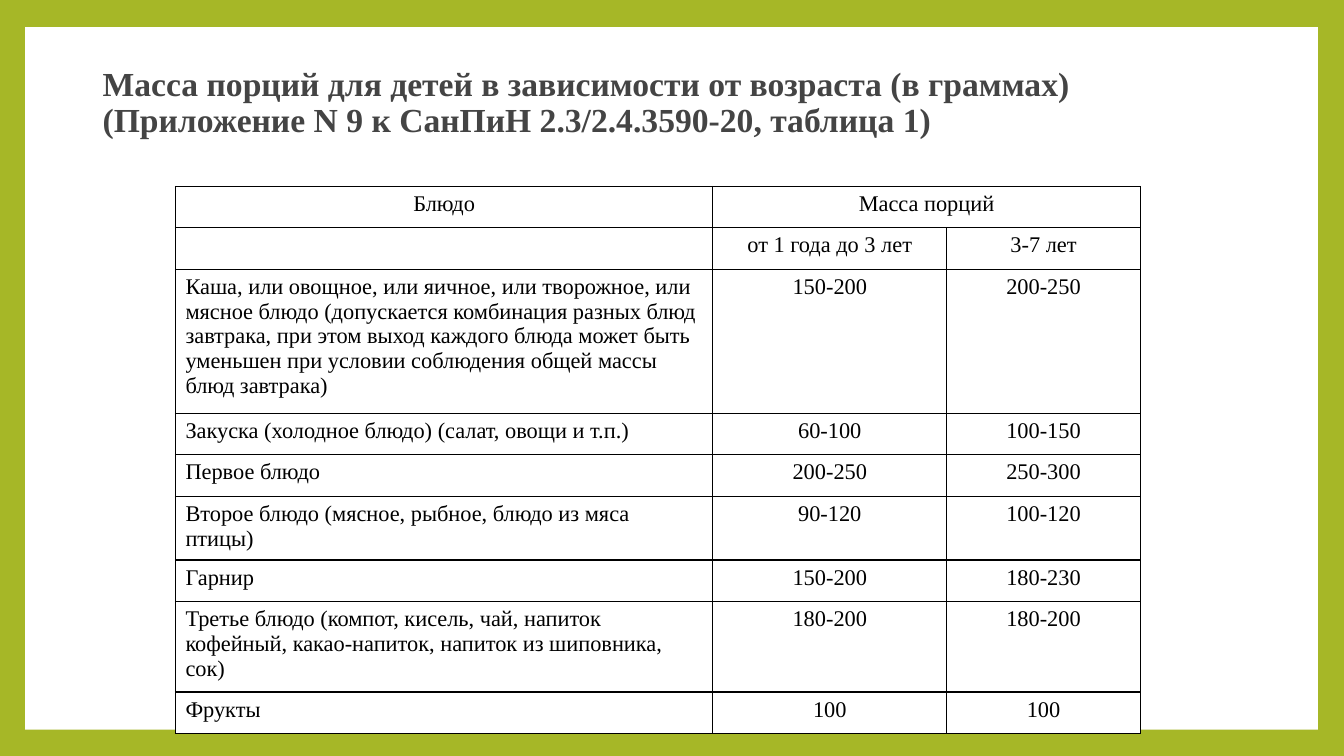
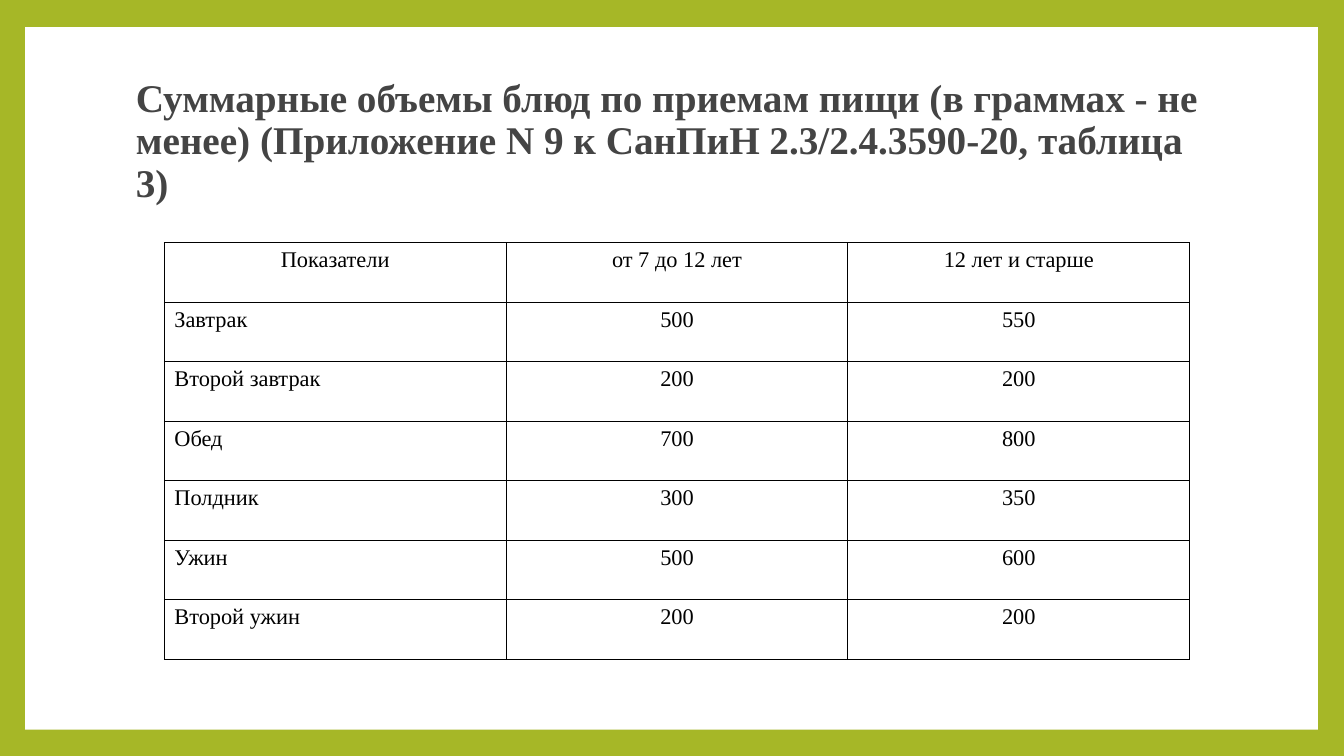
from lxml import etree
from pptx import Presentation
from pptx.dml.color import RGBColor
from pptx.enum.shapes import MSO_SHAPE
from pptx.enum.text import MSO_ANCHOR, PP_ALIGN
from pptx.oxml.ns import qn
from pptx.util import Emu, Pt

RECT = MSO_SHAPE.RECTANGLE
MIDDLE = MSO_ANCHOR.MIDDLE
LEFT, CENTER = PP_ALIGN.LEFT, PP_ALIGN.CENTER

GREEN = RGBColor(0xA6, 0xB7, 0x27)
WHITE = RGBColor(0xFF, 0xFF, 0xFF)
GRAY = RGBColor(0x44, 0x44, 0x44)
BLACK = RGBColor(0x00, 0x00, 0x00)
FONT = "Times New Roman"

PX = 9144  # 100 px to the inch
SLIDE_W, SLIDE_H = 1333, 750
PANEL = (25, 27, 1282, 697)

PORTIONS = [
    ("Блюдо", "Масса порций", ""),
    ("", "от 1 года до 3 лет", "3-7 лет"),
    ("Каша, или овощное, или яичное, или творожное, или мясное блюдо "
     "(допускается комбинация разных блюд завтрака, при этом выход каждого "
     "блюда может быть уменьшен при условии соблюдения общей массы блюд "
     "завтрака)", "150-200", "200-250"),
    ("Закуска (холодное блюдо) (салат, овощи и т.п.)", "60-100", "100-150"),
    ("Первое блюдо", "200-250", "250-300"),
    ("Второе блюдо (мясное, рыбное, блюдо из мяса птицы)", "90-120", "100-120"),
    ("Гарнир", "150-200", "180-230"),
    ("Третье блюдо (компот, кисель, чай, напиток кофейный, какао-напиток, "
     "напиток из шиповника, сок)", "180-200", "180-200"),
    ("Фрукты", "100", "100"),
]
MEALS = [
    ("Показатели", "от 7 до 12 лет", "12 лет и старше"),
    ("Завтрак", "500", "550"),
    ("Второй завтрак", "200", "200"),
    ("Обед", "700", "800"),
    ("Полдник", "300", "350"),
    ("Ужин", "500", "600"),
    ("Второй ужин", "200", "200"),
]


def px(*lengths):
    return [Emu(n * PX) for n in lengths]


def put_text(tf, text, size=16, color=BLACK, bold=False, align=LEFT, spacing=None):
    tf.word_wrap = True
    p = tf.paragraphs[0]
    p.alignment = align
    p.line_spacing = spacing
    r = p.add_run()
    r.text = text
    r.font.name = FONT
    r.font.size = Pt(size)
    r.font.bold = bold
    r.font.color.rgb = color


def set_borders(cell, width):
    tc_pr = cell._tc.get_or_add_tcPr()
    for side in ("a:lnL", "a:lnR", "a:lnT", "a:lnB"):
        ln = etree.SubElement(tc_pr, qn(side), w=str(Pt(width)))
        fill = etree.SubElement(ln, qn("a:solidFill"))
        etree.SubElement(fill, qn("a:srgbClr"), val=str(BLACK))


def add_framed_slide(prs):
    """Add a blank slide with a white panel inside a green frame."""
    slide = prs.slides.add_slide(prs.slide_layouts[6])
    bg = slide.background.fill
    bg.solid()
    bg.fore_color.rgb = GREEN
    sp = slide.shapes.add_shape(RECT, *px(*PANEL))
    sp.shadow.inherit = False
    sp.fill.solid()
    sp.fill.fore_color.rgb = WHITE
    sp.line.fill.background()
    return slide


def add_title(slide, box, text, size):
    tf = slide.shapes.add_textbox(*px(*box)).text_frame
    tf.vertical_anchor = MIDDLE
    put_text(tf, text, size=size, color=GRAY, bold=True, spacing=0.9)


def add_grid(slide, left, top, rows, col_widths, row_height, header_rows, border):
    """Add a bordered table whose headers and value columns are centred."""
    box = px(left, top, sum(col_widths), row_height * len(rows))
    table = slide.shapes.add_table(len(rows), len(col_widths), *box).table
    table.first_row = table.horz_banding = False
    for col, width in zip(table.columns, col_widths):
        col.width = Emu(width * PX)
    for i, row in enumerate(rows):
        table.rows[i].height = Emu(row_height * PX)
        for j, text in enumerate(row):
            cell = table.cell(i, j)
            set_borders(cell, border)
            cell.fill.solid()
            cell.fill.fore_color.rgb = WHITE
            if text:
                centred = i < header_rows or j > 0
                put_text(cell.text_frame, text, align=CENTER if centred else LEFT)
    return table


def build_portions_slide(prs):
    slide = add_framed_slide(prs)
    add_title(slide, (92, 40, 1150, 125),
              "Масса порций для детей в зависимости от возраста (в граммах) "
              "(Приложение N 9 к СанПиН 2.3/2.4.3590-20, таблица 1)", 24)
    table = add_grid(slide, 174, 185, PORTIONS, (533, 232, 192), 41,
                     header_rows=2, border=1)
    table.cell(0, 1).merge(table.cell(0, 2))


def build_meals_slide(prs):
    slide = add_framed_slide(prs)
    add_title(slide, (125, 67, 1080, 148),
              "Суммарные объемы блюд по приемам пищи (в граммах - не менее) "
              "(Приложение N 9 к СанПиН 2.3/2.4.3590-20, таблица 3)", 28)
    add_grid(slide, 163, 241, MEALS, (339,) * 3, 59, header_rows=1, border=0.75)


def main():
    prs = Presentation()
    prs.slide_width, prs.slide_height = px(SLIDE_W, SLIDE_H)
    build_portions_slide(prs)
    build_meals_slide(prs)
    prs.save("out.pptx")


if __name__ == "__main__":
    main()
